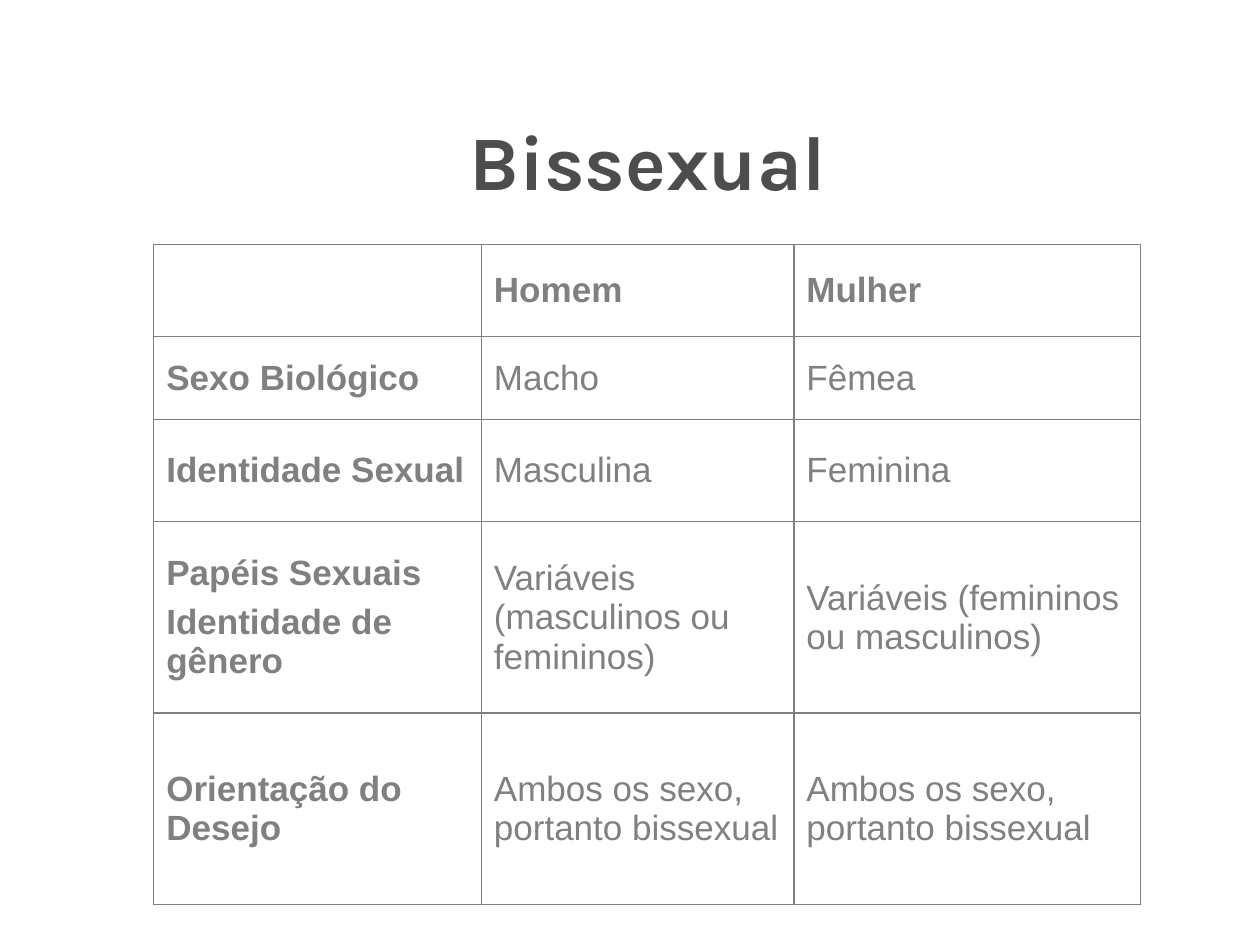
import pptx
import pptx.util
import pptx.dml.color
import pptx.enum.text
import pptx.oxml
import pptx.oxml.ns

Inches = pptx.util.Inches
Pt = pptx.util.Pt
DARK = pptx.dml.color.RGBColor(0x4D, 0x4D, 0x4D)
GRAY = pptx.dml.color.RGBColor(0x80, 0x80, 0x80)
MID = pptx.enum.text.MSO_ANCHOR.MIDDLE
CENTER = pptx.enum.text.PP_ALIGN.CENTER
LEFT = pptx.enum.text.PP_ALIGN.LEFT


def write(frame, text, font="Arial", size=20, color=GRAY, bold=False, align=LEFT, lead=1.01):
    for num, line in enumerate(text.split("\n")):
        para = frame.add_paragraph() if num else frame.paragraphs[0]
        para.alignment = align
        para.line_spacing = lead
        para.space_before = Pt(5 if num else 0)
        run = para.add_run()
        run.text = line
        run.font.name = font
        run.font.size = Pt(size)
        run.font.bold = bold
        run.font.color.rgb = color


deck = pptx.Presentation()
deck.slide_width = Inches(10)
deck.slide_height = Inches(7.5)
slide = deck.slides.add_slide(deck.slide_layouts[5])

title = slide.shapes.title
title.left, title.top = Inches(1.14), Inches(0.76)
title.width, title.height = Inches(8), Inches(1.01)
title.text_frame.vertical_anchor = MID
write(title.text_frame, "Bissexual", font="Karla", size=44, color=DARK,
      bold=True, align=CENTER, lead=1)

rows = [
    ["", "Homem", "Mulher"],
    ["Sexo Biológico", "Macho", "Fêmea"],
    ["Identidade Sexual", "Masculina", "Feminina"],
    ["Papéis Sexuais\nIdentidade de gênero", "Variáveis (masculinos ou femininos)",
     "Variáveis (femininos ou masculinos)"],
    ["Orientação do Desejo", "Ambos os sexo, portanto bissexual",
     "Ambos os sexo, portanto bissexual"],
]
wides = [2.6, 2.48, 2.75]
highs = [0.73, 0.66, 0.81, 1.52, 1.52]

table = slide.shapes.add_table(len(rows), len(wides), Inches(1.22), Inches(1.94),
                               Inches(sum(wides)), Inches(sum(highs))).table
table.first_row = False
table.horz_banding = False
for col, wide in zip(table.columns, wides):
    col.width = Inches(wide)
for row, high in zip(table.rows, highs):
    row.height = Inches(high)

for r, row in enumerate(rows):
    for c, text in enumerate(row):
        cell = table.cell(r, c)
        cell.vertical_anchor = MID
        cell.margin_left = cell.margin_right = Inches(0.1)
        cell.margin_top = cell.margin_bottom = Inches(0.05)
        cell.fill.background()
        if text:
            write(cell.text_frame, text, bold=r == 0 or c == 0)
        props = cell._tc.get_or_add_tcPr()
        for spot, side in enumerate("LRTB"):
            props.insert(spot, pptx.oxml.parse_xml(
                f'<a:ln{side} {pptx.oxml.ns.nsdecls("a")} w="{Pt(1)}">'
                f'<a:solidFill><a:srgbClr val="{GRAY}"/></a:solidFill></a:ln{side}>'))

deck.save("out.pptx")
